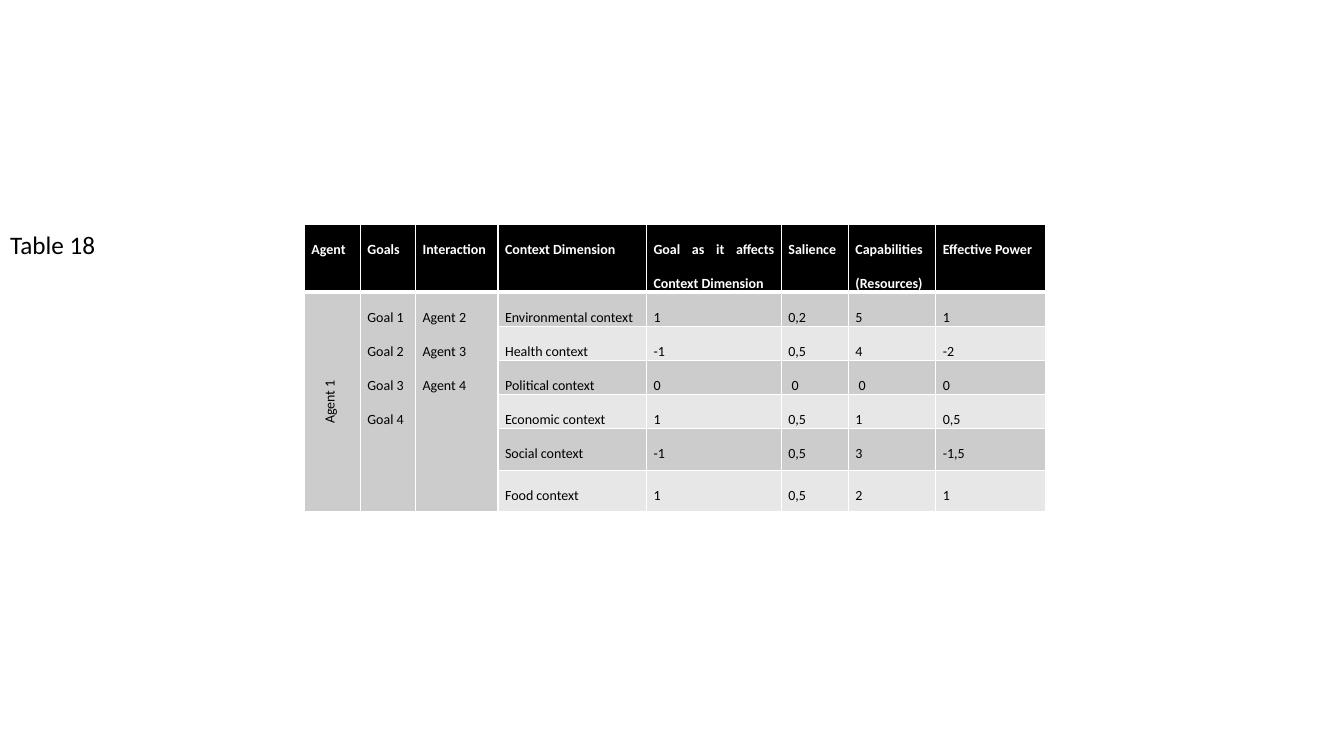
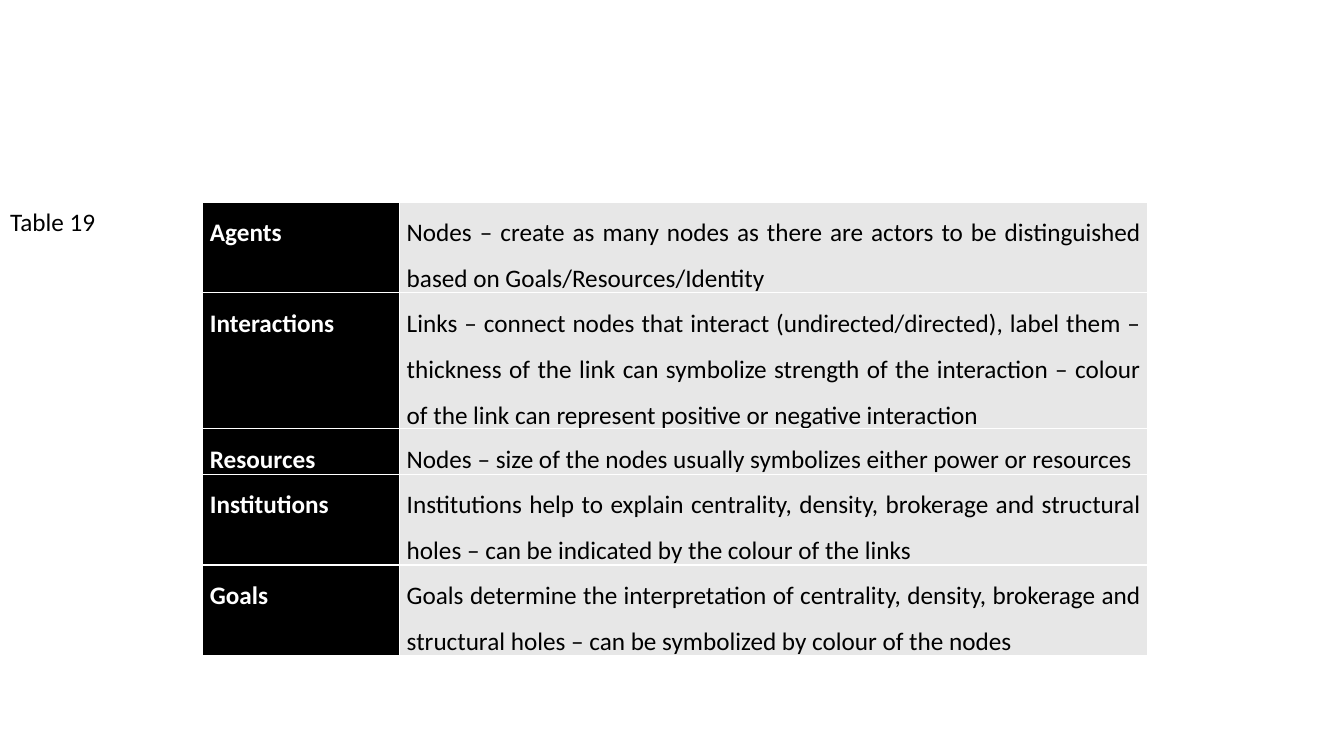
from dataclasses import dataclass

from lxml.etree import SubElement
from pptx import Presentation
from pptx.dml.color import RGBColor
from pptx.enum.text import MSO_ANCHOR, MSO_AUTO_SIZE, PP_ALIGN
from pptx.oxml.ns import qn
from pptx.presentation import Presentation as Deck
from pptx.slide import Slide
from pptx.table import Table, _Cell
from pptx.text.text import _Paragraph
from pptx.util import Cm, Pt

COLORS = {
    "black": "000000",
    "white": "FFFFFF",
    "dark band": "CCCCCC",
    "light band": "E7E7E7",
}
FONT = "Calibri"
TITLE_ONLY_LAYOUT = 5
THIN, THICK = 1, 3


@dataclass(frozen=True)
class CellStyle:
    fill: str
    text: str
    bold: bool = False


HEADING = CellStyle("black", "white", bold=True)
DARK = CellStyle("dark band", "black")
LIGHT = CellStyle("light band", "black")


@dataclass(frozen=True)
class TableSlide:
    """Contents and layout of a slide; lengths in cm, text size in points."""
    title: str
    left: float
    top: float
    title_top: float
    columns: tuple[float, ...]
    rows: tuple[float, ...]
    size: int
    line_spacing: float
    cells: list[list[str]]
    header_row: bool = False
    merged_columns: int = 0

    def style(self, row: int, column: int) -> CellStyle:
        if not self.header_row:
            return HEADING if column == 0 else LIGHT
        if row == 0:
            return HEADING
        return DARK if row % 2 else LIGHT


AGENT_TABLE = TableSlide(
    title="Table 18",
    left=7.67,
    top=5.66,
    title_top=5.66,
    columns=(1.41, 1.39, 2.08, 3.74, 3.4, 1.69, 2.2, 2.76),
    rows=(1.7, 0.86, 0.86, 0.86, 0.86, 1.05, 1.05),
    size=10,
    line_spacing=2.0,
    header_row=True,
    merged_columns=3,
    cells=[
        ["Agent", "Goals", "Interaction", "Context Dimension",
         "Goal as it affects Context Dimension", "Salience",
         "Capabilities (Resources)", "Effective Power"],
        ["Agent 1", "Goal 1\nGoal 2\nGoal 3\nGoal 4", "Agent 2\nAgent 3\nAgent 4",
         "Environmental context", "1", "0,2", "5", "1"],
        ["", "", "", "Health context", "-1", "0,5", "4", "-2"],
        ["", "", "", "Political context", "0", " 0", " 0", "0"],
        ["", "", "", "Economic context", "1", "0,5", "1", "0,5"],
        ["", "", "", "Social context", "-1", "0,5", "3", "-1,5"],
        ["", "", "", "Food context", "1", "0,5", "2", "1"],
    ],
)

NETWORK_TABLE = TableSlide(
    title="Table 19",
    left=5.11,
    top=5.09,
    title_top=5.08,
    columns=(4.96, 18.86),
    rows=(1.63, 2.69, 1.07, 1.63, 1.63),
    size=18,
    line_spacing=1.5,
    cells=[
        ["Agents", "Nodes – create as many nodes as there are actors to be "
                   "distinguished based on Goals/Resources/Identity"],
        ["Interactions", "Links – connect nodes that interact (undirected/directed), "
                         "label them – thickness of the link can symbolize strength "
                         "of the interaction – colour of the link can represent "
                         "positive or negative interaction"],
        ["Resources", "Nodes – size of the nodes usually symbolizes either power "
                      "or resources"],
        ["Institutions", "Institutions help to explain centrality, density, brokerage "
                         "and structural holes – can be indicated by the colour of "
                         "the links"],
        ["Goals", "Goals determine the interpretation of centrality, density, "
                  "brokerage and structural holes – can be symbolized by colour "
                  "of the nodes"],
    ],
)


def color(name: str) -> RGBColor:
    return RGBColor.from_string(COLORS[name])


def add_run(paragraph: _Paragraph, text: str, size: int, color_name: str,
            bold: bool = False) -> None:
    run = paragraph.add_run()
    run.text = text
    run.font.name = FONT
    run.font.size = Pt(size)
    run.font.bold = bold
    run.font.color.rgb = color(color_name)


def add_title(slide: Slide, text: str, top: float) -> None:
    title = slide.shapes.title
    title.left, title.top = Cm(0), Cm(top)
    title.width, title.height = Cm(2.7), Cm(1.03)
    frame = title.text_frame
    frame.word_wrap = False
    frame.auto_size = MSO_AUTO_SIZE.SHAPE_TO_FIT_TEXT
    frame.vertical_anchor = MSO_ANCHOR.TOP
    paragraph = frame.paragraphs[0]
    paragraph.alignment = PP_ALIGN.LEFT
    add_run(paragraph, text, 18, "black")


def set_borders(cell: _Cell, top: int, bottom: int) -> None:
    properties = cell._tc.get_or_add_tcPr()
    widths = {"a:lnL": THIN, "a:lnR": THIN, "a:lnT": top, "a:lnB": bottom}
    for position, (tag, width) in enumerate(widths.items()):
        line = SubElement(properties, qn(tag), w=str(Pt(width)))
        fill = SubElement(line, qn("a:solidFill"))
        SubElement(fill, qn("a:srgbClr"), val=COLORS["white"])
        properties.insert(position, line)


def fill_cell(cell: _Cell, text: str, style: CellStyle, size: int,
              line_spacing: float) -> None:
    cell.margin_left = cell.margin_right = Cm(0.18)
    cell.margin_top = cell.margin_bottom = Cm(0)
    cell.fill.solid()
    cell.fill.fore_color.rgb = color(style.fill)
    if not text:
        return
    frame = cell.text_frame
    for index, line in enumerate(text.split("\n")):
        paragraph = frame.add_paragraph() if index else frame.paragraphs[0]
        paragraph.alignment = PP_ALIGN.JUSTIFY
        paragraph.line_spacing = line_spacing
        add_run(paragraph, line, size, style.text, style.bold)


def merge_agent_columns(table: Table, count: int) -> None:
    """Join the first columns below the header and turn the agent's name."""
    last_row = len(table.rows) - 1
    for column in range(count):
        table.cell(1, column).merge(table.cell(last_row, column))
    agent = table.cell(1, 0)
    agent.text_frame.paragraphs[0].alignment = PP_ALIGN.CENTER
    agent._tc.get_or_add_tcPr().set("vert", "vert270")


def add_table(slide: Slide, content: TableSlide) -> None:
    frame = slide.shapes.add_table(
        len(content.rows), len(content.columns), Cm(content.left), Cm(content.top),
        Cm(sum(content.columns)), Cm(sum(content.rows)))
    table = frame.table
    table.first_row = content.header_row
    table.horz_banding = False
    for column, width in zip(table.columns, content.columns):
        column.width = Cm(width)
    for row, height in zip(table.rows, content.rows):
        row.height = Cm(height)
    for row_index, texts in enumerate(content.cells):
        top = THICK if content.header_row and row_index == 1 else THIN
        bottom = THICK if content.header_row and row_index == 0 else THIN
        for column_index, text in enumerate(texts):
            cell = table.cell(row_index, column_index)
            style = content.style(row_index, column_index)
            fill_cell(cell, text, style, content.size, content.line_spacing)
            set_borders(cell, top, bottom)
    if content.merged_columns:
        merge_agent_columns(table, content.merged_columns)


def add_table_slide(presentation: Deck, content: TableSlide) -> None:
    layout = presentation.slide_layouts[TITLE_ONLY_LAYOUT]
    slide = presentation.slides.add_slide(layout)
    add_title(slide, content.title, content.title_top)
    add_table(slide, content)


def main() -> None:
    presentation = Presentation()
    presentation.slide_width, presentation.slide_height = Cm(33.87), Cm(19.05)
    for content in (AGENT_TABLE, NETWORK_TABLE):
        add_table_slide(presentation, content)
    presentation.save("out.pptx")


if __name__ == "__main__":
    main()
